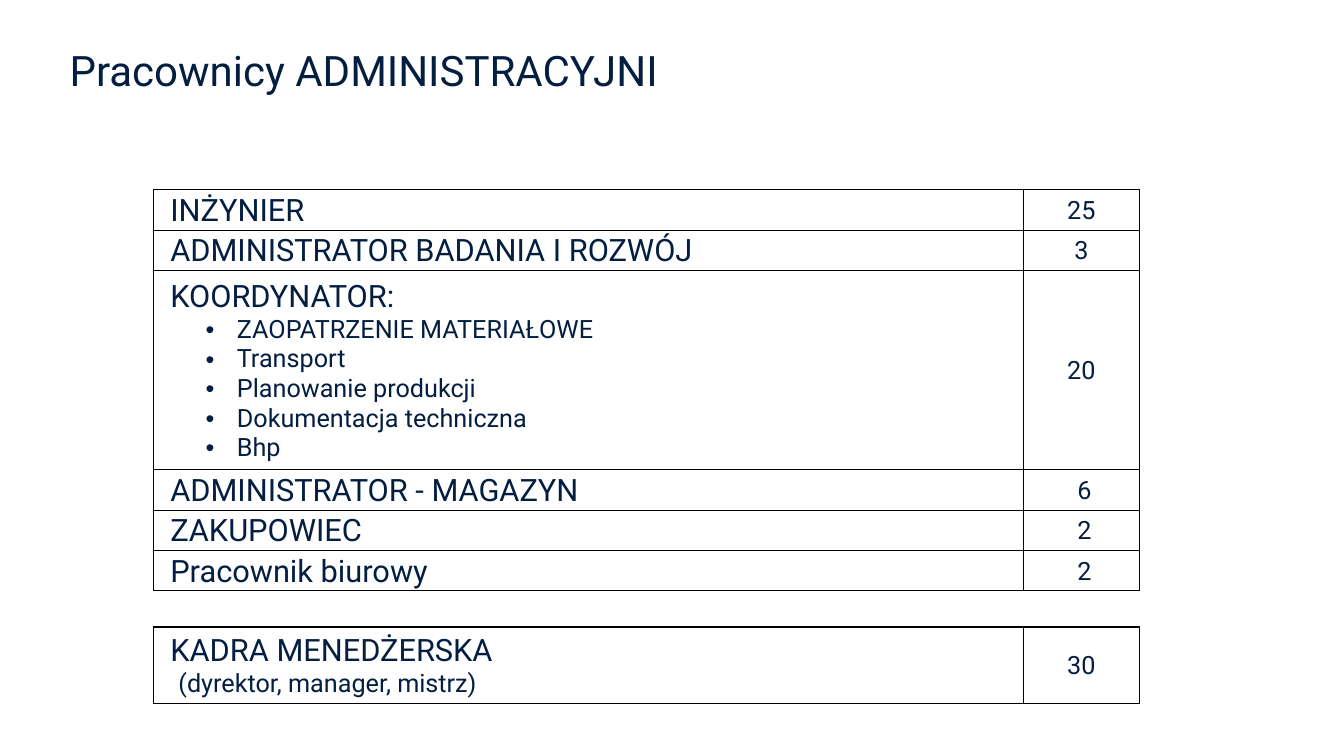
from dataclasses import dataclass

from lxml import etree
from pptx import Presentation
from pptx.dml.color import RGBColor
from pptx.enum.text import MSO_ANCHOR, MSO_AUTO_SIZE, PP_ALIGN
from pptx.oxml import parse_xml
from pptx.oxml.ns import nsdecls, qn
from pptx.util import Inches, Pt

MIDDLE, TOP = MSO_ANCHOR.MIDDLE, MSO_ANCHOR.TOP
LEFT, CENTER = PP_ALIGN.LEFT, PP_ALIGN.CENTER
GROW = MSO_AUTO_SIZE.SHAPE_TO_FIT_TEXT


@dataclass(frozen=True)
class Theme:
    font: str = "Roboto"
    navy: RGBColor = RGBColor(0x04, 0x1E, 0x42)
    border: str = "000000"
    title: int = 30
    role: int = 22
    detail: int = 18


THEME = Theme()


def write(paragraph, text, size, align=LEFT, indent=0, bullet=False):
    paragraph.text = text
    paragraph.alignment = align
    properties = paragraph._p.get_or_add_pPr()
    properties.set("marL", str(Inches(indent)))
    properties.set("indent", str(Inches(-0.31 if bullet else 0)))
    if bullet:
        etree.SubElement(properties, qn("a:buFont"), typeface="Arial")
        etree.SubElement(properties, qn("a:buChar"), char="•")
    paragraph.font.name = THEME.font
    paragraph.font.size = Pt(size)
    paragraph.font.color.rgb = THEME.navy


def style_cell(cell, left_margin, line_width):
    cell.vertical_anchor = MIDDLE
    cell.margin_left = Inches(left_margin)
    cell.margin_top = cell.margin_right = Inches(0.02)
    cell.margin_bottom = 0
    properties = cell._tc.get_or_add_tcPr()
    for side in ("lnL", "lnR", "lnT", "lnB"):
        properties.append(parse_xml(
            f'<a:{side} {nsdecls("a")} w="{Pt(line_width)}"><a:solidFill>'
            f'<a:srgbClr val="{THEME.border}"/></a:solidFill></a:{side}>'))
    cell.fill.background()


prs = Presentation()
prs.slide_width, prs.slide_height = Inches(13.33), Inches(7.5)
slide = prs.slides.add_slide(prs.slide_layouts[5])

# Title
title = slide.shapes.title
title.left, title.top = Inches(0.59), Inches(0.45)
title.width, title.height = Inches(9.78), Inches(0.56)
title.text_frame.word_wrap = True
title.text_frame.auto_size = GROW
title.text_frame.vertical_anchor = TOP
heading = title.text_frame.paragraphs[0]
write(heading, "Pracownicy ADMINISTRACYJNI", THEME.title)
heading.line_spacing = 0.9

# Content: role, details, headcount, row height, shift of the headcount
coordination = ["ZAOPATRZENIE MATERIAŁOWE", "Transport", "Planowanie produkcji",
                "Dokumentacja techniczna", "Bhp"]
staff = [
    ("INŻYNIER", [], "25", 0.4, 0),
    ("ADMINISTRATOR BADANIA I ROZWÓJ", [], "3", 0.4, 0),
    ("KOORDYNATOR:", coordination, "20", 1.98, 0),
    ("ADMINISTRATOR - MAGAZYN", [], "6", 0.4, 0.06),
    ("ZAKUPOWIEC", [], "2", 0.4, 0.06),
    ("Pracownik biurowy", [], "2", 0.4, 0.06),
]
managers = [("KADRA MENEDŻERSKA", ["(dyrektor, manager, mistrz)"], "30", 0.76, 0)]

# Tables: rows, top, line width, detail indent, bulleted details
for rows, top, line_width, detail_indent, bulleted in (
        (staff, 1.88, 0.5, 0.66, True),
        (managers, 6.22, 1, 0.08, False)):
    height = sum(row[3] for row in rows)
    table = slide.shapes.add_table(len(rows), 2, Inches(1.52), Inches(top),
                                   Inches(9.78), Inches(height)).table
    table.first_row = table.horz_banding = False
    table.columns[0].width, table.columns[1].width = Inches(8.63), Inches(1.15)

    for index, (role, details, headcount, row_height, shift) in enumerate(rows):
        table.rows[index].height = Inches(row_height)
        role_cell, count_cell = table.cell(index, 0), table.cell(index, 1)
        style_cell(role_cell, 0.17, line_width)
        style_cell(count_cell, 0.02 + shift, line_width)
        write(role_cell.text_frame.paragraphs[0], role, THEME.role)
        for detail in details:
            write(role_cell.text_frame.add_paragraph(), detail, THEME.detail,
                  indent=detail_indent, bullet=bulleted)
        write(count_cell.text_frame.paragraphs[0], headcount, THEME.detail, CENTER)

prs.save("out.pptx")
